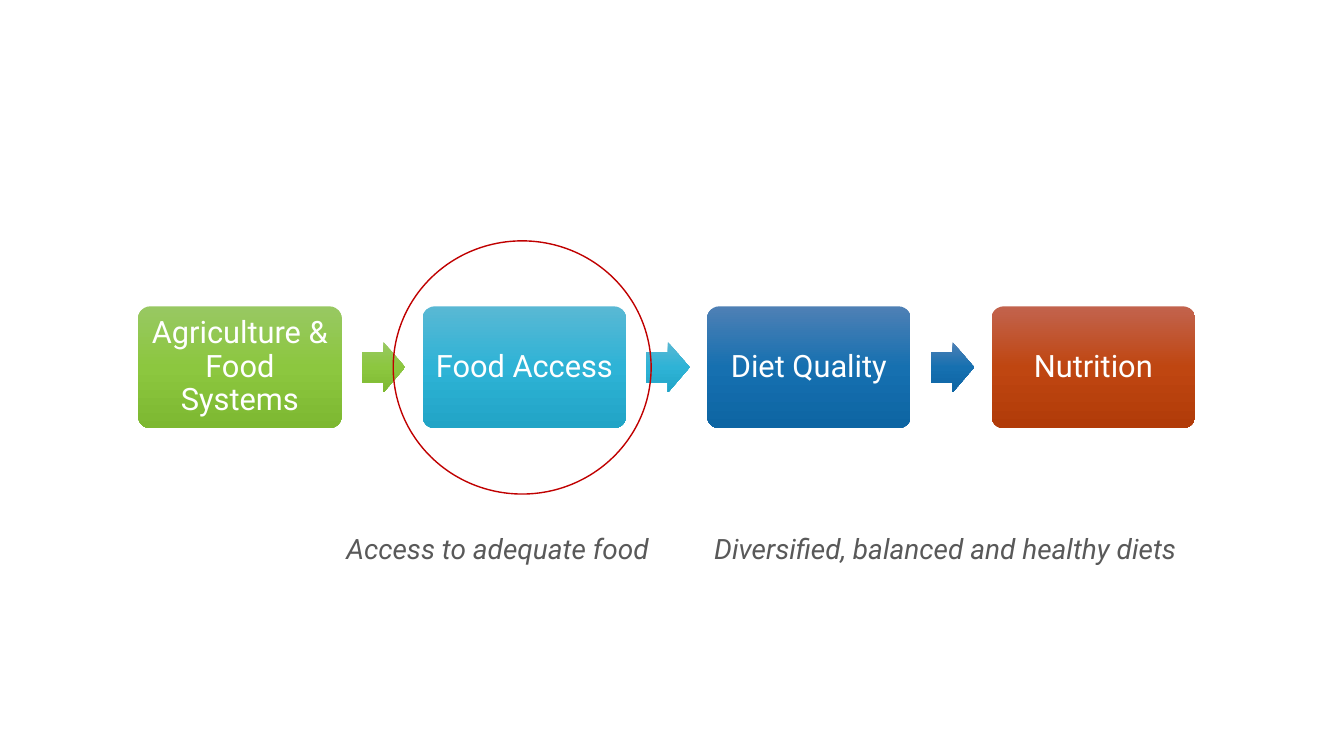
from copy import deepcopy

from pptx import Presentation
from pptx.dml.color import RGBColor
from pptx.enum.shapes import MSO_SHAPE
from pptx.enum.text import MSO_ANCHOR, PP_ALIGN
from pptx.util import Cm, Pt

ROUNDED = MSO_SHAPE.ROUNDED_RECTANGLE
ARROW = MSO_SHAPE.RIGHT_ARROW
OVAL = MSO_SHAPE.OVAL
CENTER, LEFT = PP_ALIGN.CENTER, PP_ALIGN.LEFT
MIDDLE, TOP = MSO_ANCHOR.MIDDLE, MSO_ANCHOR.TOP

# Content
STEPS = [
    ("Agriculture & Food Systems", "green"),
    ("Food Access", "cyan"),
    ("Diet Quality", "blue"),
    ("Nutrition", "rust"),
]
CAPTIONS = [
    ("Access to adequate food", 8.48),
    ("Diversified, balanced and healthy diets", 17.75),
]
COLORS = {
    "white": "FFFFFF",
    "grey": "595959",
    "red": "C00000",
}
GRADIENTS = {
    "green": ("98C862", "8CC73F", "7DB831"),
    "cyan": ("59B8D4", "2EB3D6", "21A4C6"),
    "blue": ("4E80B5", "1670B0", "0D65A3"),
    "rust": ("C2634D", "BF4611", "B13B08"),
}
FONT = "Roboto"

# Layout in centimetres
BOX_LEFT, BOX_TOP, BOX_W, BOX_H = 3.48, 7.72, 5.13, 3.07
STEP = 7.17
ARROW_W, ARROW_H = 1.09, 1.27
ARROW_GAP = 0.51
CAPTION_TOP, CAPTION_W, CAPTION_H = 13.28, 13.8, 1.11
RING = (9.91, 6.07, 6.5, 6.38)


def write(shape, text, size=20, color="grey", italic=False, align=LEFT,
          anchor=TOP, spacing=1.0):
    tf = shape.text_frame
    tf.word_wrap = True
    tf.vertical_anchor = anchor
    p = tf.paragraphs[0]
    p.alignment = align
    p.line_spacing = spacing
    r = p.add_run()
    r.text = text
    r.font.name = FONT
    r.font.size = Pt(size)
    r.font.italic = italic
    r.font.color.rgb = RGBColor.from_string(COLORS[color])
    return tf


def add_shape(s, kind, left, top, width, height):
    sp = s.shapes.add_shape(kind, Cm(left), Cm(top), Cm(width), Cm(height))
    sp.shadow.inherit = False
    return sp


def fill_gradient(sp, name):
    sp.line.fill.background()
    fill = sp.fill
    fill.gradient()
    fill.gradient_angle = 270
    # Add a third stop between the two default ones
    stops = sp.element.spPr.gradFill.gsLst
    stops.insert(1, deepcopy(stops[0]))
    for stop, position, color in zip(fill.gradient_stops, (0, 0.5, 1), GRADIENTS[name]):
        stop.position = position
        stop.color.rgb = RGBColor.from_string(color)


def main():
    prs = Presentation()
    prs.slide_width, prs.slide_height = Cm(33.87), Cm(19.05)
    s = prs.slides.add_slide(prs.slide_layouts[6])

    # Process boxes, each followed by an arrow except the last
    for i, (label, color) in enumerate(STEPS):
        left = BOX_LEFT + i * STEP
        box = add_shape(s, ROUNDED, left, BOX_TOP, BOX_W, BOX_H)
        box.adjustments[0] = 0.1
        fill_gradient(box, color)
        tf = write(box, label, size=22, color="white", align=CENTER,
                   anchor=MIDDLE, spacing=0.9)
        tf.margin_left = tf.margin_right = Cm(0.22)
        if i < len(STEPS) - 1:
            arrow = add_shape(s, ARROW, left + BOX_W + ARROW_GAP,
                              BOX_TOP + (BOX_H - ARROW_H) / 2, ARROW_W, ARROW_H)
            arrow.adjustments[0] = 0.6
            arrow.adjustments[1] = 0.5
            fill_gradient(arrow, color)

    # Captions
    for text, left in CAPTIONS:
        caption = s.shapes.add_textbox(Cm(left), Cm(CAPTION_TOP), Cm(CAPTION_W), Cm(CAPTION_H))
        write(caption, text, italic=True)

    # Ring around the highlighted step
    ring = add_shape(s, OVAL, *RING)
    ring.fill.background()
    ring.line.color.rgb = RGBColor.from_string(COLORS["red"])
    ring.line.width = Pt(1)

    prs.save("out.pptx")


if __name__ == "__main__":
    main()
